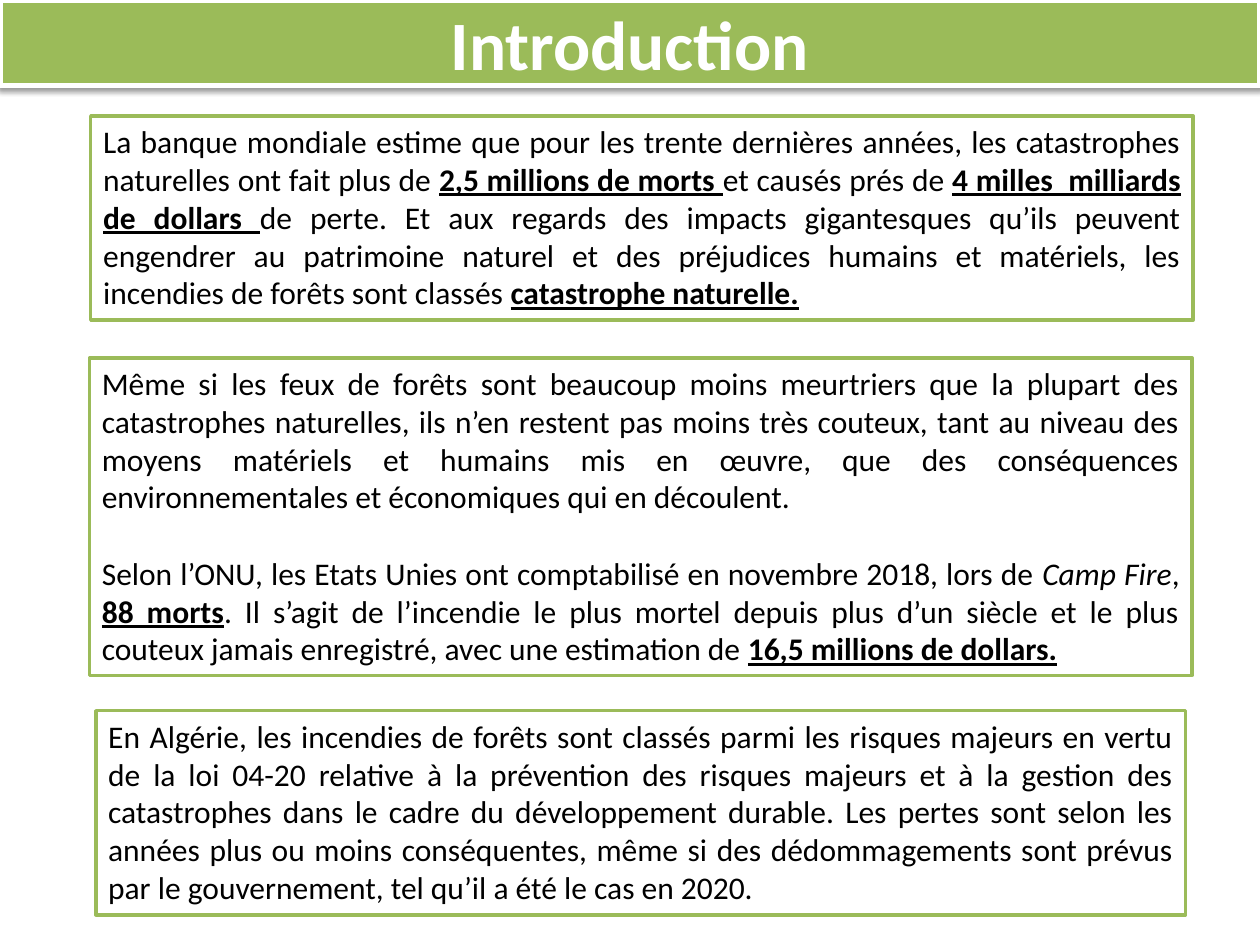
from dataclasses import dataclass
from lxml.etree import SubElement
from pptx import Presentation
from pptx.dml.color import RGBColor as RGB
from pptx.enum.shapes import MSO_SHAPE as Shape
from pptx.enum.text import MSO_ANCHOR as Anchor, MSO_AUTO_SIZE as Fit, PP_ALIGN as Align
from pptx.oxml.ns import qn
from pptx.util import Inches, Pt


@dataclass(frozen=True)
class Theme:
    green: RGB = RGB(0x9B, 0xBB, 0x59)
    white: RGB = RGB(0xFF, 0xFF, 0xFF)
    black: RGB = RGB(0, 0, 0)
    font: str = "Calibri"
    head: float = 39.6
    body: float = 18
    gap: float = 22


THEME = Theme()
WIDE, HIGH = 10, 7.5

# Each panel: left, top, width, height, then paragraphs of (text, style) runs;
# style letters: b bold, u underlined, i italic.
PANELS = [
    (0.72, 0.92, 8.75, 1.62, [[
        ("La banque mondiale estime que pour les trente dernières années, les "
         "catastrophes naturelles ont fait plus de ", ""),
        ("2,5 millions de morts ", "bu"),
        ("et causés prés de ", ""),
        ("4 milles  milliards de dollars ", "bu"),
        ("de perte. Et aux regards des impacts gigantesques qu’ils peuvent "
         "engendrer au patrimoine naturel et des préjudices humains et "
         "matériels, les incendies de forêts sont classés ", ""),
        ("catastrophe naturelle.", "bu"),
    ]]),
    (0.71, 2.84, 8.75, 2.52, [[
        ("Même si les feux de forêts sont beaucoup moins meurtriers que la "
         "plupart des catastrophes naturelles, ils n’en restent pas moins très "
         "couteux, tant au niveau des moyens matériels et humains mis en œuvre, "
         "que des conséquences environnementales et économiques qui en "
         "découlent. ", ""),
    ], [
        ("Selon l’ONU, les Etats Unies ont comptabilisé en novembre 2018, "
         "lors de ", ""),
        ("Camp Fire", "i"),
        (", ", ""),
        ("88 morts", "bu"),
        (". Il s’agit de l’incendie le plus mortel depuis plus d’un siècle et "
         "le plus couteux jamais enregistré, avec une estimation de ", ""),
        ("16,5 millions de dollars.", "bu"),
    ]]),
    (0.76, 5.64, 8.65, 1.62, [[
        ("En Algérie, les incendies de forêts sont classés parmi les risques "
         "majeurs en vertu de la loi 04-20 relative à la prévention des risques "
         "majeurs et à la gestion des catastrophes dans le cadre du "
         "développement durable. Les pertes sont selon les années plus ou moins "
         "conséquentes, même si des dédommagements sont prévus par le "
         "gouvernement, tel qu’il a été le cas en 2020. ", ""),
    ]]),
]


def add_box(slide, area, fill, line, width):
    box = slide.shapes.add_shape(Shape.RECTANGLE, *map(Inches, area))
    box.shadow.inherit = False
    box.fill.solid()
    box.fill.fore_color.rgb = fill
    box.line.color.rgb = line
    box.line.width = Pt(width)
    box.text_frame.word_wrap = True
    return box


def drop_shadow(box):
    """Cast a soft shadow straight down."""
    effects = box._element.spPr.find(qn("a:effectLst"))
    shade = SubElement(effects, qn("a:outerShdw"), blurRad=str(Pt(3.1)),
                       dist=str(Pt(1.6)), dir="5400000", rotWithShape="0")
    tint = SubElement(shade, qn("a:srgbClr"), val=str(THEME.black))
    SubElement(tint, qn("a:alpha"), val="38000")


def style_run(run, size, color, style=""):
    font = run.font
    font.name, font.size, font.color.rgb = THEME.font, Pt(size), color
    font.bold = "b" in style
    font.italic = "i" in style
    font.underline = "u" in style


def add_title(slide, text):
    box = add_box(slide, (0, 0, WIDE, 0.68), THEME.green, THEME.white, 3)
    drop_shadow(box)
    frame = box.text_frame
    frame.text = text
    frame.vertical_anchor = Anchor.MIDDLE
    para = frame.paragraphs[0]
    para.alignment = Align.CENTER
    style_run(para.runs[0], THEME.head, THEME.white, "b")


def add_panel(slide, area, paras):
    frame = add_box(slide, area, THEME.white, THEME.green, 2).text_frame
    frame.auto_size = Fit.SHAPE_TO_FIT_TEXT
    frame.vertical_anchor = Anchor.TOP
    for i, parts in enumerate(paras):
        para = frame.add_paragraph() if i else frame.paragraphs[0]
        para.alignment = Align.JUSTIFY
        if i:
            para.space_before = Pt(THEME.gap)
        for text, style in parts:
            run = para.add_run()
            run.text = text
            style_run(run, THEME.body, THEME.black, style)


def main():
    deck = Presentation()
    deck.slide_width, deck.slide_height = Inches(WIDE), Inches(HIGH)
    slide = deck.slides.add_slide(deck.slide_layouts[6])
    add_title(slide, "Introduction")
    for *area, paras in PANELS:
        add_panel(slide, area, paras)
    deck.save("out.pptx")


if __name__ == "__main__":
    main()
